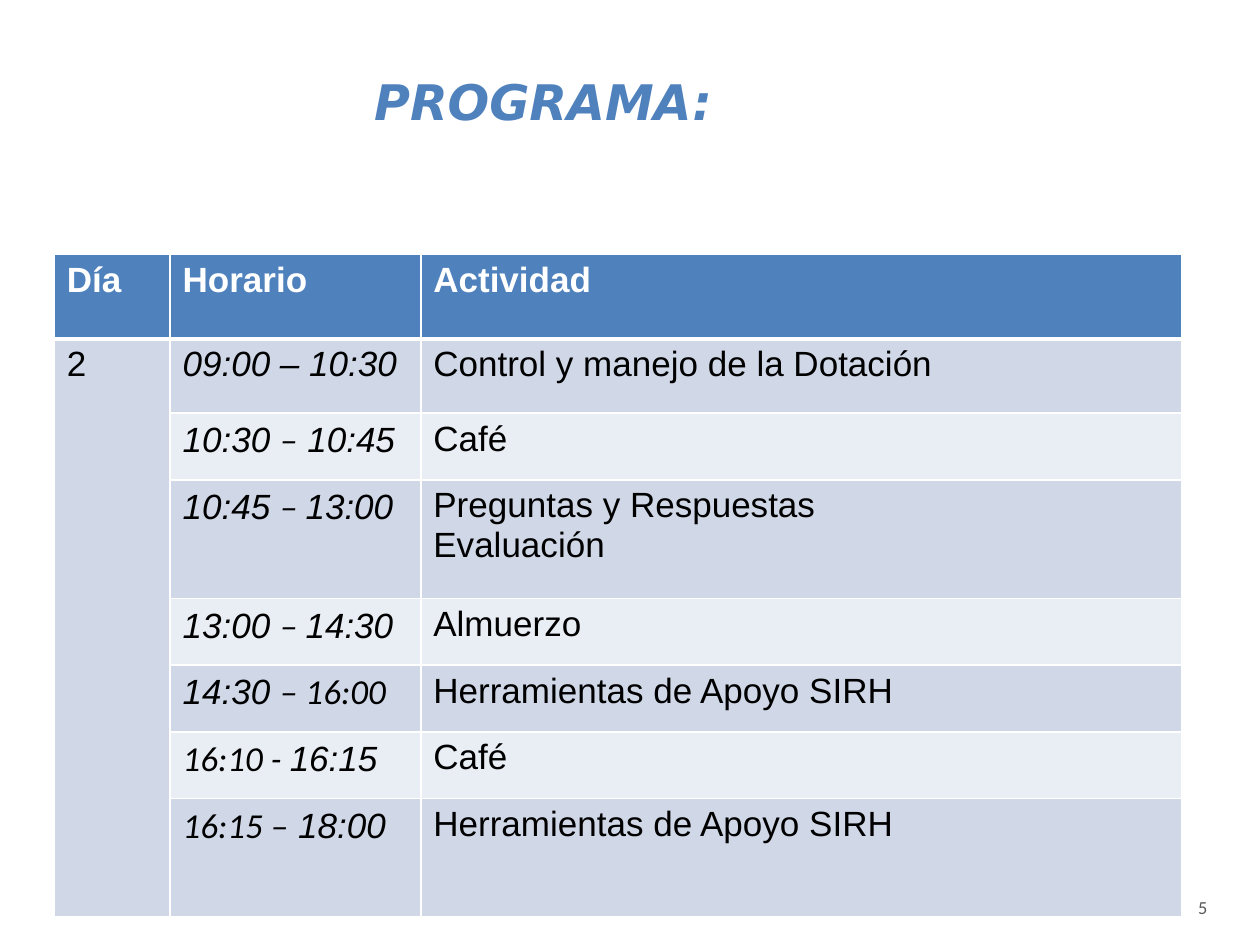
from dataclasses import dataclass

import pptx
import pptx.dml.color
import pptx.enum.text
import pptx.oxml
import pptx.oxml.ns
import pptx.util
from pptx.util import Inches


@dataclass(frozen=True)
class Theme:
    accent: str = "4F81BD"
    dark_band: str = "D0D8E8"
    light_band: str = "E9EDF4"
    white: str = "FFFFFF"
    black: str = "000000"
    gray: str = "595959"
    title_font: str = "DejaVu Sans"
    table_font: str = "Arial"
    time_font: str = "Calibri"
    title_size: float = 28
    table_size: float = 20
    number_size: float = 10.5
    border: float = 1
    header_border: float = 3


class SlideBuilder:
    def __init__(self, page, theme):
        self.page = page
        self.theme = theme

    def style(self, span, name, size, color, bold=False, italic=False):
        font = span.font
        font.name = name
        font.size = pptx.util.Pt(size)
        font.color.rgb = pptx.dml.color.RGBColor.from_string(color)
        font.bold = bold
        font.italic = italic

    def title(self, text, left, top, width, height):
        box = self.page.shapes.title
        box.left, box.top, box.width, box.height = left, top, width, height
        frame = box.text_frame
        frame.text = text
        frame.vertical_anchor = pptx.enum.text.MSO_ANCHOR.TOP
        para = frame.paragraphs[0]
        para.alignment = pptx.enum.text.PP_ALIGN.LEFT
        theme = self.theme
        self.style(para.runs[0], theme.title_font, theme.title_size, theme.accent, True, True)

    def page_number(self, text, left, top, width, height):
        frame = self.page.shapes.add_textbox(left, top, width, height).text_frame
        frame.word_wrap = False
        frame.text = text
        theme = self.theme
        self.style(frame.paragraphs[0].runs[0], theme.time_font, theme.number_size, theme.gray)

    def borders(self, cell, top, bottom):
        theme = self.theme
        properties = cell._tc.get_or_add_tcPr()
        sides = {"L": theme.border, "R": theme.border, "T": top, "B": bottom}
        for index, (side, points) in enumerate(sides.items()):
            line = pptx.oxml.parse_xml(
                f'<a:ln{side} {pptx.oxml.ns.nsdecls("a")} w="{pptx.util.Pt(points)}">'
                f'<a:solidFill><a:srgbClr val="{theme.white}"/></a:solidFill></a:ln{side}>'
            )
            properties.insert(index, line)

    def cell(self, cell, text, row, italic):
        theme = self.theme
        header = row == 0
        fill = theme.accent if header else (theme.light_band, theme.dark_band)[row % 2]
        cell.fill.solid()
        cell.fill.fore_color.rgb = pptx.dml.color.RGBColor.from_string(fill)
        self.borders(
            cell,
            theme.header_border if row == 1 else theme.border,
            theme.header_border if header else theme.border,
        )
        frame = cell.text_frame
        frame.text = text.replace("|", "")
        color = theme.white if header else theme.black
        for para, line in zip(frame.paragraphs, text.split("\n")):
            para.text = ""
            for index, part in enumerate(line.split("|")):
                if part:
                    span = para.add_run()
                    span.text = part
                    name = theme.time_font if index % 2 else theme.table_font
                    self.style(span, name, theme.table_size, color, header, italic)

    def table(self, rows, left, top, widths, heights):
        shape = self.page.shapes.add_table(
            len(rows), len(widths), left, top, Inches(sum(widths)), Inches(sum(heights))
        )
        table = shape.table
        for column, width in zip(table.columns, widths):
            column.width = Inches(width)
        for row, (texts, height) in enumerate(zip(rows, heights)):
            table.rows[row].height = Inches(height)
            for column, text in enumerate(texts):
                self.cell(table.cell(row, column), text, row, row > 0 and column == 1)
        table.cell(1, 0).merge(table.cell(len(rows) - 1, 0))


HEADER = ("Día", "Horario", "Actividad")
DAY = "2"
# "|" switches between the table font and the time font
SESSIONS = [
    ("09:00 – 10:30", "Control y manejo de la Dotación"),
    ("10:30 |–| 10:45", "Café"),
    ("10:45 |– |13:00", "Preguntas y Respuestas\nEvaluación"),
    ("13:00 |– |14:30", "Almuerzo"),
    ("14:30 |– 16:00", "Herramientas de Apoyo SIRH"),
    ("|16:10 - |16:15", "Café"),
    ("|16:15 –| 18:00", "Herramientas de Apoyo SIRH"),
]
COLUMN_WIDTHS = (0.92, 1.99, 6.04)
SHORT, TALL = 0.53, 0.94
ROW_HEIGHTS = (0.67, 0.59, SHORT, TALL, SHORT, SHORT, SHORT, TALL)


def main():
    deck = pptx.Presentation()
    deck.slide_width, deck.slide_height = Inches(10), Inches(7.5)
    page = deck.slides.add_slide(deck.slide_layouts.get_by_name("Title Only"))
    builder = SlideBuilder(page, Theme())
    builder.page_number("5", Inches(9.41), Inches(7.06), Inches(0.48), Inches(0.29))
    builder.title("PROGRAMA:", Inches(2.87), Inches(0.52), Inches(6.51), Inches(1.12))
    rows = [HEADER] + [
        (DAY if index == 0 else "", *session) for index, session in enumerate(SESSIONS)
    ]
    builder.table(rows, Inches(0.43), Inches(2.02), COLUMN_WIDTHS, ROW_HEIGHTS)
    deck.save("out.pptx")


if __name__ == "__main__":
    main()
